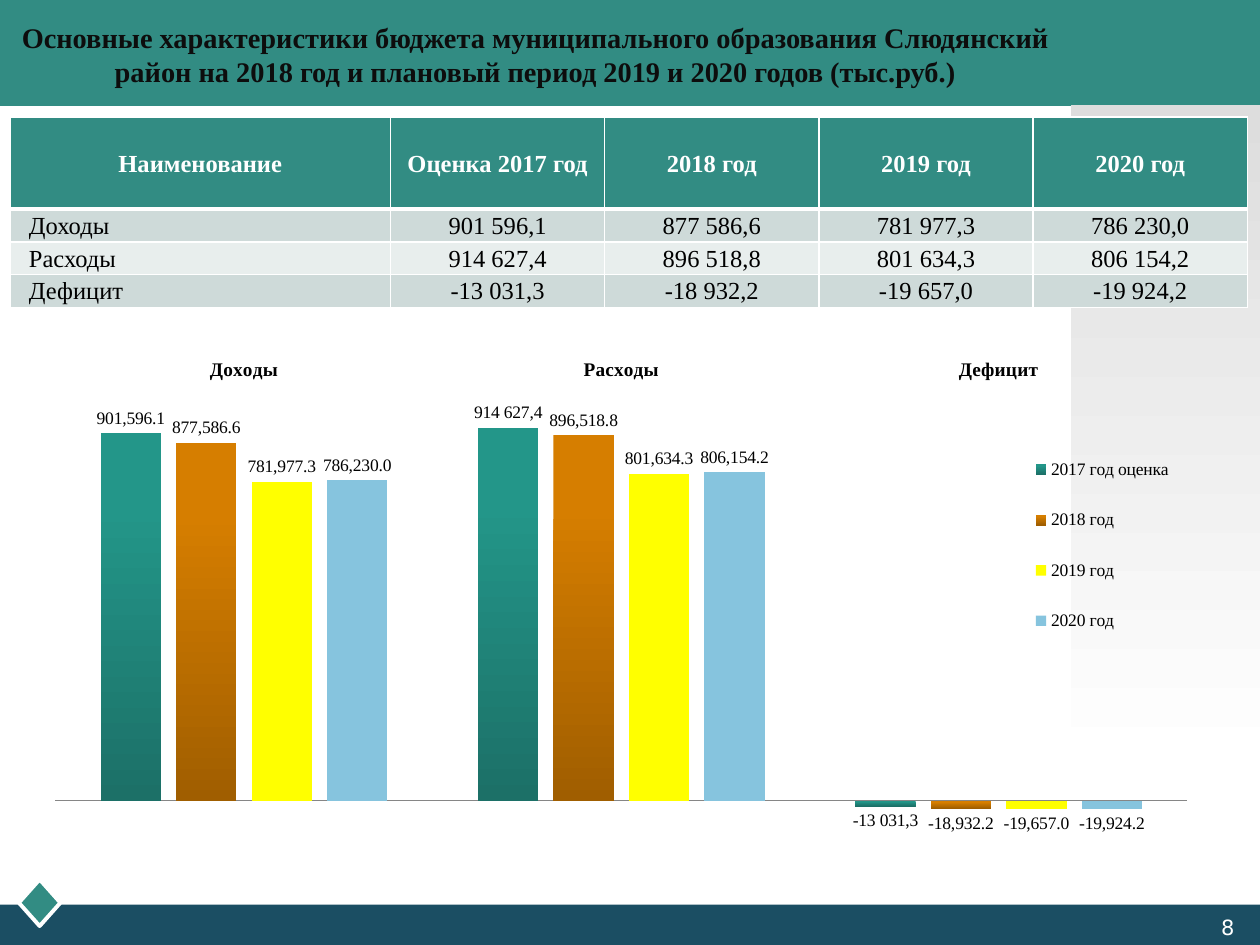
from dataclasses import dataclass

from lxml.etree import SubElement
from pptx import Presentation
from pptx.chart.data import CategoryChartData
from pptx.chart.series import BarSeries
from pptx.dml.color import RGBColor
from pptx.dml.fill import FillFormat
from pptx.enum.chart import (XL_CHART_TYPE, XL_LABEL_POSITION, XL_LEGEND_POSITION,
                             XL_TICK_LABEL_POSITION, XL_TICK_MARK)
from pptx.enum.shapes import MSO_SHAPE
from pptx.enum.text import MSO_ANCHOR, PP_ALIGN
from pptx.oxml.ns import qn
from pptx.oxml.xmlchemy import BaseOxmlElement
from pptx.shapes.autoshape import Shape
from pptx.slide import Slide
from pptx.table import _Cell
from pptx.text.text import Font
from pptx.util import Inches, Pt

TEAL = RGBColor(0x32, 0x8C, 0x83)
NAVY = RGBColor(0x1B, 0x4E, 0x63)
YELLOW = RGBColor(0xFF, 0xFF, 0x00)
SKY = RGBColor(0x86, 0xC4, 0xDE)
BAR_TEAL = RGBColor(0x23, 0x96, 0x89)
DARK_TEAL = RGBColor(0x1C, 0x70, 0x67)
BAR_ORANGE = RGBColor(0xD6, 0x7E, 0x00)
DARK_ORANGE = RGBColor(0xA0, 0x5E, 0x00)
PANEL_GRAY = RGBColor(0xDD, 0xDD, 0xDD)
AXIS_GRAY = RGBColor(0x86, 0x86, 0x86)
ROW_DARK = RGBColor(0xCE, 0xDA, 0xD9)
ROW_LIGHT = RGBColor(0xE8, 0xEE, 0xED)
INK = RGBColor(0x0D, 0x0D, 0x0D)
BLACK = RGBColor(0, 0, 0)
WHITE = RGBColor(0xFF, 0xFF, 0xFF)
SERIF = "Times New Roman"
NUMBER_FORMAT = "#,##0.0"


@dataclass
class Region:
    left: float
    top: float
    width: float
    height: float

    def lengths(self) -> list[int]:
        return [Inches(n) for n in (self.left, self.top, self.width, self.height)]


@dataclass
class TextStyle:
    size: float
    color: RGBColor
    bold: bool = False
    name: str = SERIF

    def apply(self, font: Font) -> None:
        font.size, font.bold, font.name = Pt(self.size), self.bold, self.name
        font.color.rgb = self.color


@dataclass
class YearSeries:
    name: str
    values: tuple[float, ...]
    color: RGBColor
    shade: RGBColor | None = None


CATEGORIES = ("Доходы", "Расходы", "Дефицит")
YEARS = (
    YearSeries("2017 год оценка", (901596.1, 914627.4, -13031.3), BAR_TEAL, DARK_TEAL),
    YearSeries("2018 год", (877586.6, 896518.8, -18932.2), BAR_ORANGE, DARK_ORANGE),
    YearSeries("2019 год", (781977.3, 801634.3, -19657.0), YELLOW),
    YearSeries("2020 год", (786230.0, 806154.2, -19924.2), SKY),
)
HEADINGS = ("Наименование", "Оценка 2017 год", "2018 год", "2019 год", "2020 год")
CUSTOM_LABELS = {1: "914 627,4", 2: "-13 031,3"}


def russian_number(value: float) -> str:
    return f"{value:,.1f}".replace(",", " ").replace(".", ",")


def fill_gradient(fill: FillFormat, top: RGBColor, bottom: RGBColor, start: float) -> None:
    fill.gradient()
    fill.gradient_angle = 270
    first, last = fill.gradient_stops
    first.color.rgb, first.position = top, start
    last.color.rgb, last.position = bottom, 1


def add_block(page: Slide, kind: MSO_SHAPE, region: Region, color: RGBColor) -> Shape:
    block = page.shapes.add_shape(kind, *region.lengths())
    block.shadow.inherit = False
    block.fill.solid()
    block.fill.fore_color.rgb = color
    block.line.fill.background()
    return block


def add_label(page: Slide, text: str, region: Region, style: TextStyle,
              anchor: MSO_ANCHOR = MSO_ANCHOR.TOP) -> None:
    frame = page.shapes.add_textbox(*region.lengths()).text_frame
    frame.word_wrap = True
    frame.vertical_anchor = anchor
    para = frame.paragraphs[0]
    para.text, para.alignment = text, PP_ALIGN.CENTER
    style.apply(para.font)


def add_borders(cell: _Cell, bottom_width: float) -> None:
    properties = cell._tc.get_or_add_tcPr()
    for side, width in (("L", 1), ("R", 1), ("T", 1), ("B", bottom_width)):
        line = SubElement(properties, qn(f"a:ln{side}"), w=str(Pt(width)))
        SubElement(SubElement(line, qn("a:solidFill")), qn("a:srgbClr"), val=str(WHITE))


def add_budget_table(page: Slide) -> None:
    body = [(name, *(russian_number(year.values[i]) for year in YEARS))
            for i, name in enumerate(CATEGORIES)]
    rows = [HEADINGS, *body]
    table = page.shapes.add_table(len(rows), len(HEADINGS),
                                  *Region(0.08, 0.93, 9.8, 1.51).lengths()).table
    for i, column in enumerate(table.columns):
        column.width = Inches(1.7 if i else 3.02)
    for i, values in enumerate(rows):
        table.rows[i].height = Inches(0.26 if i else 0.73)
        fill = (ROW_DARK if i % 2 else ROW_LIGHT) if i else TEAL
        style = TextStyle(14, BLACK) if i else TextStyle(14, WHITE, True)
        for j, text in enumerate(values):
            cell = table.cell(i, j)
            is_row_name = i > 0 and j == 0
            add_borders(cell, 1 if i else 3)
            cell.fill.solid()
            cell.fill.fore_color.rgb = fill
            cell.vertical_anchor = MSO_ANCHOR.MIDDLE
            cell.margin_left = Inches(0.15 if is_row_name else 0.01)
            cell.margin_right = cell.margin_top = Inches(0.01)
            cell.margin_bottom = 0
            para = cell.text_frame.paragraphs[0]
            para.text = text
            para.alignment = PP_ALIGN.LEFT if is_row_name else PP_ALIGN.CENTER
            style.apply(para.font)


def set_layout(element: BaseOxmlElement, index: int, region: Region,
               inner: bool = False) -> None:
    for old in element.findall(qn("c:layout")):
        element.remove(old)
    layout = element.makeelement(qn("c:layout"))
    element.insert(index, layout)
    manual = SubElement(layout, qn("c:manualLayout"))
    if inner:
        SubElement(manual, qn("c:layoutTarget"), val="inner")
    for mode in ("xMode", "yMode"):
        SubElement(manual, qn(f"c:{mode}"), val="edge")
    for tag, value in zip("xywh", (region.left, region.top, region.width, region.height)):
        SubElement(manual, qn(f"c:{tag}"), val=str(value))


def style_series(series: BarSeries, year: YearSeries) -> None:
    series.invert_if_negative = False
    if year.shade:
        fill_gradient(series.format.fill, year.color, year.shade, 0.2)
    else:
        series.format.fill.solid()
        series.format.fill.fore_color.rgb = year.color
    labels = series.data_labels
    labels.show_value = True
    labels.number_format, labels.number_format_is_linked = NUMBER_FORMAT, False
    labels.position = XL_LABEL_POSITION.OUTSIDE_END
    TextStyle(10, BLACK).apply(labels.font)


def add_budget_chart(page: Slide) -> None:
    data = CategoryChartData(number_format=NUMBER_FORMAT)
    data.categories = CATEGORIES
    for year in YEARS:
        data.add_series(year.name, year.values)
    chart = page.shapes.add_chart(XL_CHART_TYPE.COLUMN_CLUSTERED,
                                  *Region(0.15, 2.36, 9.66, 4.74).lengths(), data).chart
    chart.has_title = False
    TextStyle(10, BLACK).apply(chart.font)
    plot = chart.plots[0]
    plot.vary_by_categories = False
    plot.gap_width, plot.overlap = 150, -25
    for series, year in zip(plot.series, YEARS):
        style_series(series, year)
    for i, text in CUSTOM_LABELS.items():
        label = plot.series[0].points[i].data_label
        para = label.text_frame.paragraphs[0]
        para.text = text
        TextStyle(10, BLACK).apply(para.runs[0].font)
        label.position = XL_LABEL_POSITION.OUTSIDE_END
    axis = chart.category_axis
    axis.tick_label_position = XL_TICK_LABEL_POSITION.HIGH
    axis.major_tick_mark = XL_TICK_MARK.NONE
    axis.format.line.color.rgb = AXIS_GRAY
    TextStyle(11, BLACK, True).apply(axis.tick_labels.font)
    scale = chart.value_axis
    scale.minimum_scale, scale.maximum_scale = -200000, 1000000
    scale.has_major_gridlines = False
    scale.visible = False
    chart.has_legend = True
    chart.legend.position = XL_LEGEND_POSITION.RIGHT
    chart.legend.include_in_layout = False
    TextStyle(10, BLACK).apply(chart.legend.font)
    set_layout(chart.legend._element, 1, Region(0.82, 0.22, 0.14, 0.39))
    set_layout(chart._chartSpace.chart.plotArea, 0, Region(0.03, 0.16, 0.93, 0.82), True)


def main() -> None:
    deck = Presentation()
    deck.slide_width, deck.slide_height = Inches(10), Inches(7.5)
    page = deck.slides.add_slide(deck.slide_layouts[6])
    add_block(page, MSO_SHAPE.RECTANGLE, Region(0, 0, 10, 0.84), TEAL)
    add_block(page, MSO_SHAPE.RECTANGLE, Region(0, 7.18, 10, 0.32), NAVY)
    diamond = add_block(page, MSO_SHAPE.DIAMOND, Region(0.15, 6.98, 0.33, 0.37), TEAL)
    diamond.line.color.rgb, diamond.line.width = WHITE, Pt(2.25)
    panel = add_block(page, MSO_SHAPE.RECTANGLE, Region(8.5, 0.83, 1.5, 5.25), WHITE)
    fill_gradient(panel.fill, PANEL_GRAY, WHITE, 0)
    add_budget_chart(page)
    add_label(page, "Основные характеристики бюджета муниципального образования Слюдянский "
              "район на 2018 год и плановый период 2019 и 2020 годов (тыс.руб.)",
              Region(0, 0, 8.49, 0.86), TextStyle(16.2, INK, True), MSO_ANCHOR.MIDDLE)
    add_label(page, "8", Region(9.49, 7.21, 0.51, 0.29),
              TextStyle(12, WHITE, name="DejaVu Sans"))
    add_budget_table(page)
    deck.save("out.pptx")


if __name__ == "__main__":
    main()
